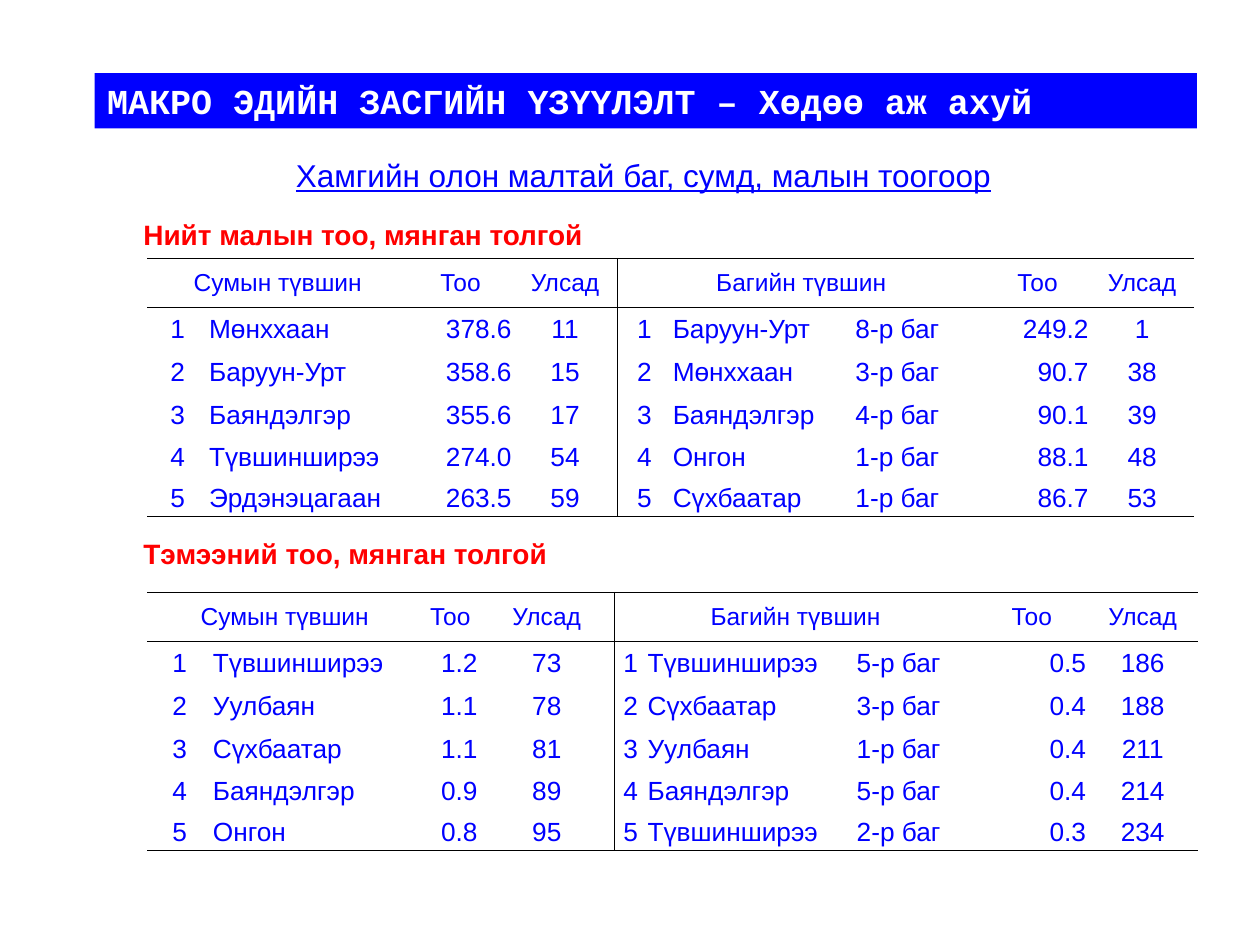
from lxml.etree import SubElement
from pptx import Presentation
from pptx.dml.color import RGBColor
from pptx.enum.text import MSO_ANCHOR, MSO_AUTO_SIZE, PP_ALIGN
from pptx.oxml.ns import qn
from pptx.util import Inches, Pt

LEFT, CENTER, RIGHT = PP_ALIGN.LEFT, PP_ALIGN.CENTER, PP_ALIGN.RIGHT
HEADERS = ["Сумын түвшин", "", "Тоо", "Улсад", "Багийн түвшин", "", "", "Тоо", "Улсад"]
HEADER_SPANS = [(0, 1), (4, 6)]
ALIGNMENTS = [CENTER, LEFT, RIGHT, CENTER, CENTER, LEFT, LEFT, RIGHT, CENTER]
ROW_HEIGHTS = [0.39, 0.34, 0.34, 0.34, 0.34, 0.3]
DIVIDER_COLUMN = 4

LIVESTOCK_WIDTHS = [0.48, 1.59, 0.83, 0.83, 0.43, 1.45, 1.04, 0.83, 0.83]
LIVESTOCK_ROWS = [
    ["1", "Мөнххаан", "378.6", "11", "1", "Баруун-Урт", "8-р баг", "249.2", "1"],
    ["2", "Баруун-Урт", "358.6", "15", "2", "Мөнххаан", "3-р баг", "90.7", "38"],
    ["3", "Баяндэлгэр", "355.6", "17", "3", "Баяндэлгэр", "4-р баг", "90.1", "39"],
    ["4", "Түвшинширээ", "274.0", "54", "4", "Онгон", "1-р баг", "88.1", "48"],
    ["5", "Эрдэнэцагаан", "263.5", "59", "5", "Сүхбаатар", "1-р баг", "86.7", "53"],
]
CAMEL_WIDTHS = [0.51, 1.67, 0.45, 1.08, 0.25, 1.66, 0.96, 0.88, 0.88]
CAMEL_ROWS = [
    ["1", "Түвшинширээ", "1.2", "73", "1", "Түвшинширээ", "5-р баг", "0.5", "186"],
    ["2", "Уулбаян", "1.1", "78", "2", "Сүхбаатар", "3-р баг", "0.4", "188"],
    ["3", "Сүхбаатар", "1.1", "81", "3", "Уулбаян", "1-р баг", "0.4", "211"],
    ["4", "Баяндэлгэр", "0.9", "89", "4", "Баяндэлгэр", "5-р баг", "0.4", "214"],
    ["5", "Онгон", "0.8", "95", "5", "Түвшинширээ", "2-р баг", "0.3", "234"],
]


def color(value):
    return RGBColor.from_string(value)


def write_text(text_frame, text, size=15, font="Arial", fill="0000FF",
               bold=False, underline=False, alignment=LEFT):
    paragraph = text_frame.paragraphs[0]
    paragraph.alignment = alignment
    run = paragraph.add_run()
    run.text = text
    run.font.name = font
    run.font.size = Pt(size)
    run.font.bold = bold
    run.font.underline = underline
    run.font.color.rgb = color(fill)


class SlideBuilder:
    blue = "0000FF"
    red = "FF0000"
    white = "FFFFFF"
    black = "000000"
    border_width = 0.5

    def __init__(self, slide):
        self.slide = slide

    def title(self, text, left, top, width, height):
        shape = self.slide.shapes.title
        shape.left, shape.top = Inches(left), Inches(top)
        shape.width, shape.height = Inches(width), Inches(height)
        shape.fill.solid()
        shape.fill.fore_color.rgb = color(self.blue)
        text_frame = shape.text_frame
        text_frame.auto_size = MSO_AUTO_SIZE.NONE
        text_frame.vertical_anchor = MSO_ANCHOR.MIDDLE
        write_text(text_frame, text, size=20, font="Courier New", fill=self.white,
                   bold=True, alignment=PP_ALIGN.JUSTIFY)

    def label(self, text, left, top, width, height, **text_format):
        shape = self.slide.shapes.add_textbox(
            Inches(left), Inches(top), Inches(width), Inches(height))
        shape.text_frame.word_wrap = True
        write_text(shape.text_frame, text, **text_format)

    def borders(self, cell, visible_sides):
        properties = cell._tc.get_or_add_tcPr()
        for side in "LRTB":
            line = SubElement(properties, qn(f"a:ln{side}"), w=str(Pt(self.border_width)))
            if side in visible_sides:
                fill = SubElement(line, qn("a:solidFill"))
                SubElement(fill, qn("a:srgbClr"), val=self.black)
            else:
                SubElement(line, qn("a:noFill"))

    def table(self, rows, widths, left, top):
        grid = [HEADERS] + rows
        table = self.slide.shapes.add_table(
            len(grid), len(widths), Inches(left), Inches(top),
            Inches(sum(widths)), Inches(sum(ROW_HEIGHTS))).table
        table.first_row = table.horz_banding = False
        for column, width in zip(table.columns, widths):
            column.width = Inches(width)
        for row, height in zip(table.rows, ROW_HEIGHTS):
            row.height = Inches(height)
        for first, last in HEADER_SPANS:
            table.cell(0, first).merge(table.cell(0, last))
        for row_index, values in enumerate(grid):
            is_header = row_index == 0
            row_sides = "TB" if is_header else "T" if row_index == 1 else ""
            if row_index == len(grid) - 1:
                row_sides = "B"
            for column_index, text in enumerate(values):
                cell = table.cell(row_index, column_index)
                column_side = {DIVIDER_COLUMN - 1: "R", DIVIDER_COLUMN: "L"}.get(column_index, "")
                self.borders(cell, row_sides + column_side)
                cell.fill.background()
                cell.margin_left = cell.margin_right = cell.margin_top = Inches(0.01)
                cell.margin_bottom = 0
                cell.vertical_anchor = MSO_ANCHOR.MIDDLE
                if text:
                    write_text(cell.text_frame, text, size=14 if is_header else 15,
                               fill=self.blue,
                               alignment=CENTER if is_header else ALIGNMENTS[column_index])


def main():
    presentation = Presentation()
    presentation.slide_width = Inches(10)
    presentation.slide_height = Inches(7.5)
    builder = SlideBuilder(presentation.slides.add_slide(presentation.slide_layouts[5]))

    builder.title("МАКРО ЭДИЙН ЗАСГИЙН ҮЗҮҮЛЭЛТ – Хөдөө аж ахуй", 0.75, 0.58, 8.75, 0.44)
    builder.label("Хамгийн олон малтай баг, сумд, малын тоогоор", 2.25, 1.19, 5.83, 0.4,
                  size=18, underline=True)
    sections = [
        ("Нийт малын тоо, мянган толгой", 1.68, LIVESTOCK_ROWS, LIVESTOCK_WIDTHS, 2.05),
        ("Тэмээний тоо, мянган толгой", 4.21, CAMEL_ROWS, CAMEL_WIDTHS, 4.7),
    ]
    for heading, heading_top, rows, widths, table_top in sections:
        builder.label(heading, 1.04, heading_top, 5.83, 0.37,
                      size=16, fill=builder.red, bold=True)
        builder.table(rows, widths, 1.17, table_top)

    presentation.save("out.pptx")


if __name__ == "__main__":
    main()
